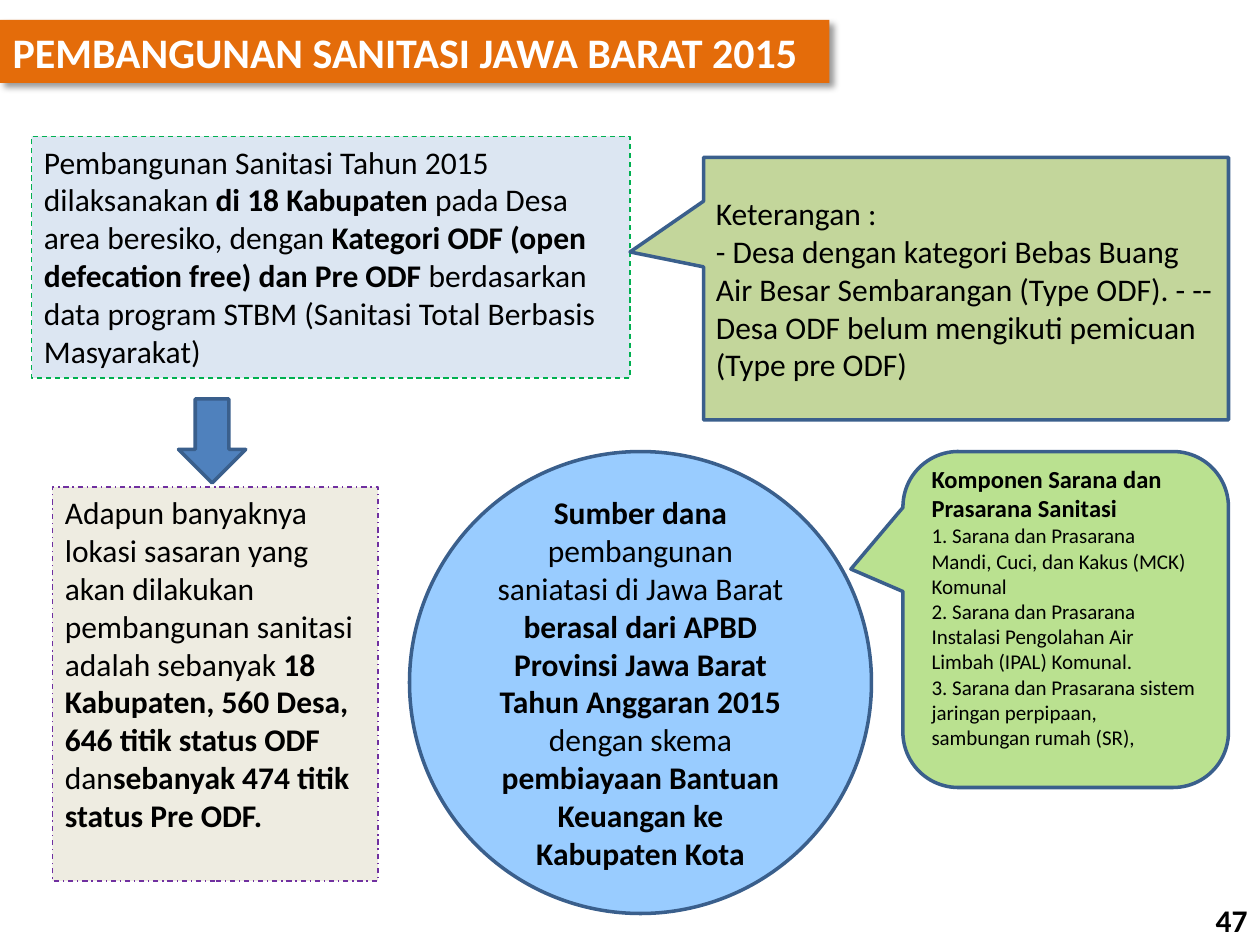
from dataclasses import dataclass
from typing import Optional

import pptx
import pptx.dml.color
import pptx.enum.dml
import pptx.enum.shapes
import pptx.enum.text
import pptx.oxml
import pptx.oxml.ns
import pptx.util

RGBColor = pptx.dml.color.RGBColor
Shape = pptx.enum.shapes.MSO_SHAPE
Dash = pptx.enum.dml.MSO_LINE
Align = pptx.enum.text.PP_ALIGN
Anchor = pptx.enum.text.MSO_ANCHOR

BLACK = RGBColor(0x00, 0x00, 0x00)
WHITE = RGBColor(0xFF, 0xFF, 0xFF)
ORANGE = RGBColor(0xE4, 0x6C, 0x0A)
PALE_BLUE = RGBColor(0xDC, 0xE6, 0xF2)
SAND = RGBColor(0xEE, 0xEC, 0xE1)
BLUE = RGBColor(0x4F, 0x81, 0xBD)
SKY = RGBColor(0x99, 0xCC, 0xFF)
OLIVE = RGBColor(0xC3, 0xD6, 0x9B)
LIME = RGBColor(0x92, 0xD0, 0x50)
OUTLINE = RGBColor(0x3A, 0x5F, 0x8C)
GREEN = RGBColor(0x00, 0xB0, 0x50)
PURPLE = RGBColor(0x70, 0x30, 0xA0)

FONT = "Calibri"
COLUMNS, ROWS = 120, 90
CELL = pptx.util.Inches(1 / 12)


@dataclass(frozen=True)
class Area:
    """A place on the slide, in grid columns and rows."""
    column: float
    row: float
    columns: float
    rows: float

    def emu(self) -> tuple[int, ...]:
        lengths = (self.column, self.row, self.columns, self.rows)
        return tuple(round(length * CELL) for length in lengths)


@dataclass(frozen=True)
class Line:
    """One paragraph; text between ** marks is bold."""
    text: str
    size: int = 18


@dataclass(frozen=True)
class Panel:
    kind: Shape
    area: Area
    fill: RGBColor
    lines: tuple[Line, ...] = ()
    outline: RGBColor = OUTLINE
    width: float = 2
    dash: Optional[Dash] = None
    anchor: Anchor = Anchor.MIDDLE
    align: Align = Align.LEFT
    adjustments: tuple[float, ...] = ()
    opacity: Optional[int] = None
    bottom_inset: float = 0.05


TITLE_AREA = Area(0, 1.9, 79, 6)
NUMBER_AREA = Area(111, 85.2, 9, 4.8)

PANELS = (
    Panel(Shape.RECTANGLE, Area(3, 13, 57, 23), PALE_BLUE, (
        Line("Pembangunan Sanitasi Tahun 2015 dilaksanakan **di 18 Kabupaten **"
             "pada Desa area beresiko, dengan **Kategori ODF (open defecation "
             "free) dan Pre ODF **berdasarkan data program STBM (Sanitasi Total "
             "Berbasis Masyarakat)"),
    ), GREEN, 0.75, Dash.DASH, Anchor.TOP),
    Panel(Shape.RECTANGLE, Area(5, 46.4, 31, 37.5), SAND, (
        Line("Adapun banyaknya lokasi sasaran yang akan dilakukan pembangunan "
             "sanitasi adalah sebanyak **18 Kabupaten, 560 Desa, 646 titik "
             "status ODF **dan**sebanyak 474 titik status Pre ODF.**"),
    ), PURPLE, 0.75, Dash.DASH_DOT, Anchor.TOP),
    Panel(Shape.DOWN_ARROW, Area(17, 38, 6.4, 8), BLUE),
    Panel(Shape.RECTANGULAR_CALLOUT, Area(67, 15, 50, 25), OLIVE, (
        Line("Keterangan :"),
        Line("- Desa dengan kategori Bebas Buang Air Besar Sembarangan (Type "
             "ODF). - -- Desa ODF belum mengikuti pemicuan (Type pre ODF)"),
    ), adjustments=(-0.64, -0.14)),
    Panel(Shape.OVAL, Area(39, 43, 44, 44), SKY, (
        Line("**Sumber dana **pembangunan saniatasi di Jawa Barat **berasal "
             "dari APBD Provinsi Jawa Barat Tahun Anggaran 2015 **dengan skema "
             "**pembiayaan Bantuan Keuangan ke Kabupaten Kota**"),
    ), align=Align.CENTER),
    Panel(Shape.ROUNDED_RECTANGULAR_CALLOUT, Area(86, 43, 31, 32), LIME, (
        Line("**Komponen Sarana dan Prasarana Sanitasi**", 14),
        Line("1. Sarana dan Prasarana Mandi, Cuci, dan Kakus (MCK) Komunal", 12),
        Line("2. Sarana dan Prasarana Instalasi Pengolahan Air Limbah (IPAL) "
             "Komunal.", 12),
        Line("3. Sarana dan Prasarana sistem jaringan perpipaan, sambungan "
             "rumah (SR),", 12),
    ), adjustments=(-0.66, -0.15, 0.17), opacity=63, bottom_inset=0.25),
)


def place(shape, area: Area) -> None:
    shape.left, shape.top, shape.width, shape.height = area.emu()


def write(frame, lines: tuple[Line, ...], color: RGBColor = BLACK,
          align: Align = Align.LEFT, anchor: Anchor = Anchor.TOP) -> None:
    frame.word_wrap = True
    frame.auto_size = pptx.enum.text.MSO_AUTO_SIZE.NONE
    frame.vertical_anchor = anchor
    for index, line in enumerate(lines):
        para = frame.add_paragraph() if index else frame.paragraphs[0]
        para.alignment = align
        for part, text in enumerate(line.text.split("**")):
            if not text:
                continue
            span = para.add_run()
            span.text = text
            span.font.name = FONT
            span.font.size = pptx.util.Pt(line.size)
            span.font.bold = part % 2 == 1
            span.font.color.rgb = color


def set_opacity(shape, percent: int) -> None:
    color = shape.fill._xPr.find(".//" + pptx.oxml.ns.qn("a:srgbClr"))
    color.append(pptx.oxml.parse_xml(
        f'<a:alpha {pptx.oxml.ns.nsdecls("a")} val="{percent * 1000}"/>'))


def cast_shadow(shape) -> None:
    """Soft black shadow towards the lower right."""
    blur, distance = pptx.util.Pt(4), pptx.util.Pt(3)
    shape._element.spPr.append(pptx.oxml.parse_xml(
        f'<a:effectLst {pptx.oxml.ns.nsdecls("a")}>'
        f'<a:outerShdw blurRad="{blur}" dist="{distance}" dir="2700000" '
        'algn="tl" rotWithShape="0"><a:srgbClr val="000000">'
        '<a:alpha val="40000"/></a:srgbClr></a:outerShdw></a:effectLst>'))


def draw_panel(page, panel: Panel) -> None:
    shape = page.shapes.add_shape(panel.kind, *panel.area.emu())
    shape.shadow.inherit = False
    for index, value in enumerate(panel.adjustments):
        shape.adjustments[index] = value
    shape.fill.solid()
    shape.fill.fore_color.rgb = panel.fill
    if panel.opacity is not None:
        set_opacity(shape, panel.opacity)
    shape.line.color.rgb = panel.outline
    shape.line.width = pptx.util.Pt(panel.width)
    if panel.dash is not None:
        shape.line.dash_style = panel.dash
    if panel.lines:
        write(shape.text_frame, panel.lines, align=panel.align,
              anchor=panel.anchor)
        shape.text_frame.margin_bottom = pptx.util.Inches(panel.bottom_inset)


def draw_title(page) -> None:
    title = page.shapes.title
    place(title, TITLE_AREA)
    title.fill.solid()
    title.fill.fore_color.rgb = ORANGE
    cast_shadow(title)
    write(title.text_frame, (Line("**PEMBANGUNAN SANITASI JAWA BARAT 2015**", 24),),
          WHITE)


def main() -> None:
    deck = pptx.Presentation()
    deck.slide_width, deck.slide_height = COLUMNS * CELL, ROWS * CELL
    page = deck.slides.add_slide(deck.slide_layouts.get_by_name("Title Only"))
    draw_title(page)
    for panel in PANELS:
        draw_panel(page, panel)
    number = page.shapes.add_textbox(*NUMBER_AREA.emu())
    write(number.text_frame, (Line("**47**"),), align=Align.RIGHT)
    deck.save("out.pptx")


if __name__ == "__main__":
    main()
